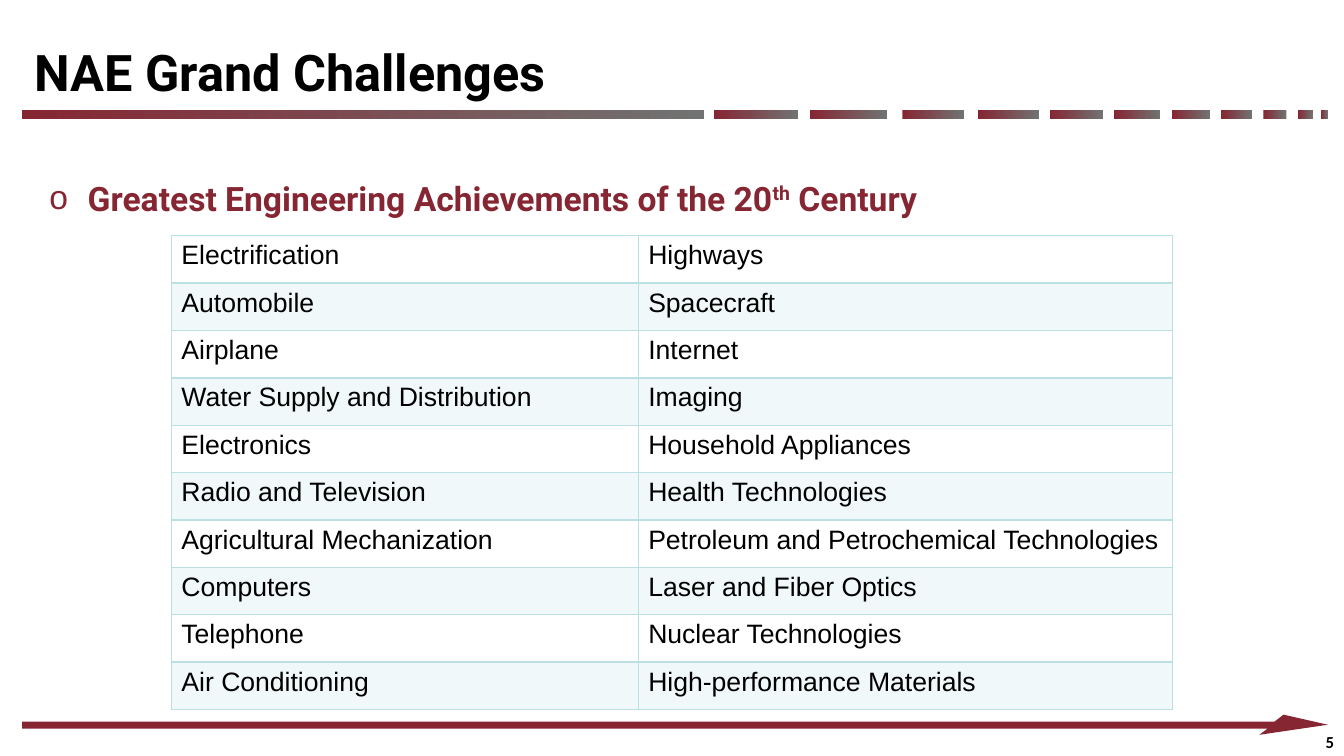
from lxml.etree import SubElement
from pptx import Presentation
from pptx.dml.color import RGBColor
from pptx.enum.shapes import MSO_SHAPE
from pptx.enum.text import MSO_ANCHOR, MSO_AUTO_SIZE, PP_ALIGN
from pptx.oxml.ns import qn
from pptx.util import Inches, Pt

# Content
TITLE = "NAE Grand Challenges"
HEADING = [("Greatest Engineering Achievements of the 20", 0), ("th", 30000), (" Century", 0)]
PAGE = "5"
ACHIEVEMENTS = [
    ("Electrification", "Highways"),
    ("Automobile", "Spacecraft"),
    ("Airplane", "Internet"),
    ("Water Supply and Distribution", "Imaging"),
    ("Electronics", "Household Appliances"),
    ("Radio and Television", "Health Technologies"),
    ("Agricultural Mechanization", "Petroleum and Petrochemical Technologies"),
    ("Computers", "Laser and Fiber Optics"),
    ("Telephone", "Nuclear Technologies"),
    ("Air Conditioning", "High-performance Materials"),
]

# Layout in inches; the arrow outline is in hundredths of an inch
COLUMNS, ROW = (4.63, 5.3), 0.47
DASH_TOP, DASH_HEIGHT = 1.09, 0.09
DASHES = [(0.22, 6.76), (7.08, 0.84), (8.03, 0.77), (8.95, 0.61), (9.7, 0.61), (10.41, 0.53),
          (11.05, 0.46), (11.62, 0.38), (12.11, 0.31), (12.53, 0.23), (12.87, 0.15), (13.1, 0.07)]
ARROW = [(1317, 719), (1273, 709), (1264, 716), (22, 716), (22, 723), (1257, 723), (1249, 729)]

MAROON = RGBColor(0x86, 0x26, 0x33)
GRAY = RGBColor(0x70, 0x73, 0x72)
BLACK = RGBColor(0, 0, 0)
AQUA = RGBColor(0xBB, 0xE0, 0xE3)


def place(sp, left, top, width, height):
    sp.left, sp.top, sp.width, sp.height = map(Inches, (left, top, width, height))
    tf = sp.text_frame
    tf.word_wrap = True
    tf.auto_size = MSO_AUTO_SIZE.NONE
    tf.vertical_anchor = MSO_ANCHOR.TOP
    return tf


def style(r, font, size, color, bold=True):
    r.font.name, r.font.size, r.font.bold = font, Pt(size), bold
    r.font.color.rgb = color


def set_borders(cell, widths):
    tcPr = cell._tc.get_or_add_tcPr()
    for i, (side, width) in enumerate(widths.items()):
        ln = SubElement(tcPr, qn(f"a:ln{side}"), w=str(Pt(width)))
        fill = SubElement(ln, qn("a:solidFill"))
        SubElement(fill, qn("a:srgbClr"), val=str(AQUA))
        tcPr.insert(i, ln)


prs = Presentation()
prs.slide_width, prs.slide_height = Inches(13.33), Inches(7.5)
s = prs.slides.add_slide(prs.slide_layouts[1])

# Dashed rule below the title
for left, width in DASHES:
    sp = s.shapes.add_shape(MSO_SHAPE.RECTANGLE, Inches(left), Inches(DASH_TOP),
                            Inches(width), Inches(DASH_HEIGHT))
    sp.shadow.inherit = False
    sp.line.fill.background()
    sp.fill.gradient()
    sp.fill.gradient_angle = 0
    for stop, color in zip(sp.fill.gradient_stops, (MAROON, GRAY)):
        stop.color.rgb = color

# Footer arrow
builder = s.shapes.build_freeform(*ARROW[0], scale=Inches(0.01))
builder.add_line_segments(ARROW[1:], close=True)
arrow = builder.convert_to_shape()
arrow.shadow.inherit = False
arrow.fill.solid()
arrow.fill.fore_color.rgb = MAROON
arrow.line.fill.background()

# Page number
p = place(s.shapes.add_textbox(0, 0, 0, 0), 12.5, 7.21, 0.83, 0.3).paragraphs[0]
p.text = PAGE
p.alignment = PP_ALIGN.RIGHT
style(p.runs[0], "Calibri", 12, BLACK)

# Title
p = place(s.shapes.title, 0.24, 0.43, 12.94, 0.57).paragraphs[0]
p.text = TITLE
p.alignment = PP_ALIGN.LEFT
p.line_spacing = 0.9
style(p.runs[0], "Roboto", 36, BLACK)

# Bulleted heading
p = place(s.placeholders[1], 0.39, 1.71, 12.64, 5.05).paragraphs[0]
p.space_before = Pt(0)
pPr = p._p.get_or_add_pPr()
pPr.set("marL", str(Inches(0.38)))
pPr.set("indent", str(-Inches(0.38)))
SubElement(pPr, qn("a:buFont"), typeface="Arial")
SubElement(pPr, qn("a:buChar"), char="o")
for text, baseline in HEADING:
    r = p.add_run()
    r.text = text
    style(r, "Roboto", 24, MAROON)
    if baseline:
        r._r.get_or_add_rPr().set("baseline", str(baseline))

# Achievements table
table = s.shapes.add_table(len(ACHIEVEMENTS), len(COLUMNS), Inches(1.7), Inches(2.34),
                           Inches(sum(COLUMNS)), Inches(ROW * len(ACHIEVEMENTS))).table
table.first_row = table.horz_banding = False
for column, width in zip(table.columns, COLUMNS):
    column.width = Inches(width)
for i, names in enumerate(ACHIEVEMENTS):
    table.rows[i].height = Inches(ROW)
    for j, name in enumerate(names):
        cell = table.cell(i, j)
        cell.text = name
        style(cell.text_frame.paragraphs[0].runs[0], "Arial", 19, BLACK, bold=False)
        if i % 2:
            cell.fill.solid()
            cell.fill.fore_color.rgb = AQUA
            tint = cell._tc.tcPr.find(".//" + qn("a:srgbClr"))
            SubElement(tint, qn("a:alpha"), val="20000")
        else:
            cell.fill.background()
        set_borders(cell, {"L": 1, "R": 1, "T": 2 if i == 1 else 1, "B": 2 if i == 0 else 1})

prs.save("out.pptx")
